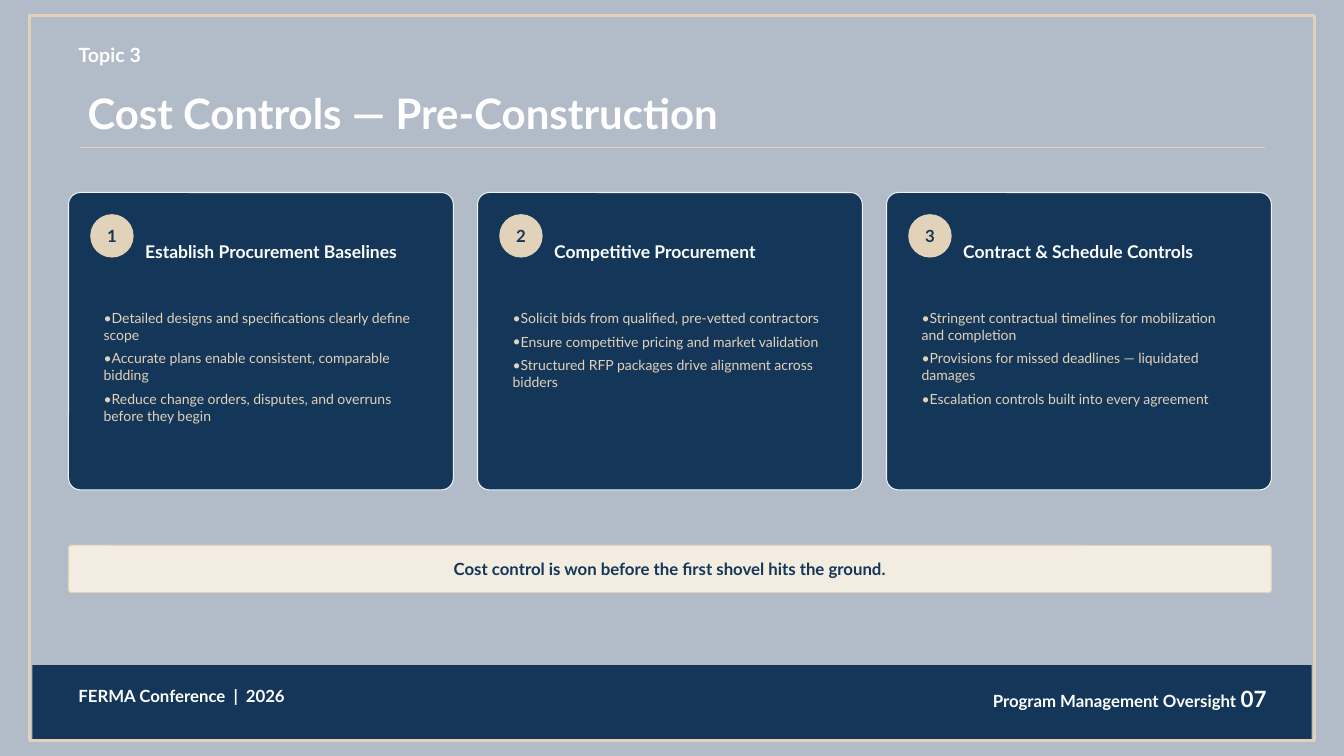
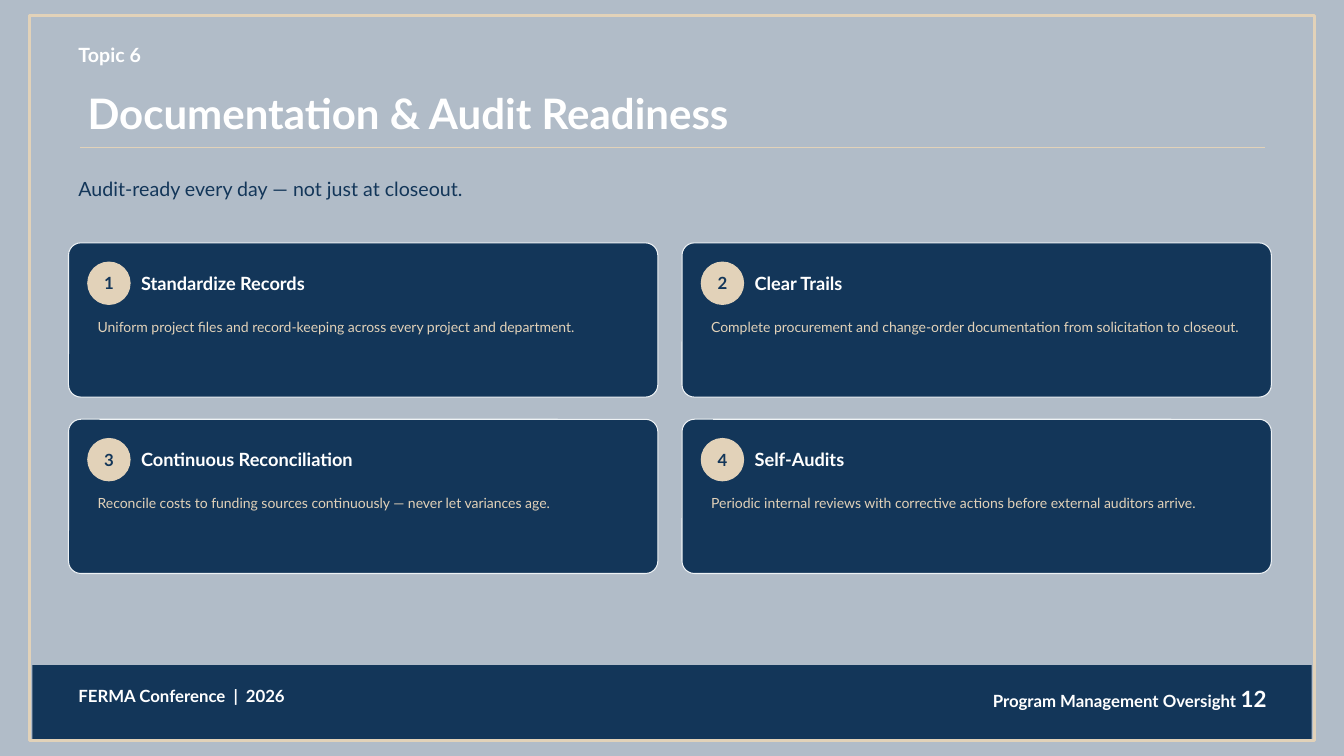
import pptx
import pptx.dml.color
import pptx.enum.shapes
import pptx.enum.text
import pptx.oxml
import pptx.oxml.ns
import pptx.util

RGB = pptx.dml.color.RGBColor
NAVY = RGB(0x13, 0x36, 0x59)
SAND = RGB(0xE2, 0xD2, 0xB9)
CREAM = RGB(0xF3, 0xEC, 0xE1)
MIST = RGB(0xB1, 0xBC, 0xC8)
PALE = RGB(0xEE, 0xF2, 0xF5)
WHITE = RGB(0xFF, 0xFF, 0xFF)

SHAPE = pptx.enum.shapes.MSO_SHAPE
ALIGN = pptx.enum.text.PP_ALIGN
MIDDLE = pptx.enum.text.MSO_ANCHOR.MIDDLE
NS = pptx.oxml.ns.nsdecls("a")
FONT = "Lato"

PAGE = (0, 0, 1333, 750)
LEFT, WIDE = 68, 1193


def px(value):
    """Turn px, at 100 to the inch, into EMU."""
    return pptx.util.Emu(round(value * 9144))


def inner(box, left, top, width, height):
    """Shift a box given relative to another one."""
    return box[0] + left, box[1] + top, width, height


def grid(box, cols, rows, gap_x, gap_y):
    """Yield equal cells, row by row."""
    left, top, width, height = box
    w = (width - gap_x * (cols - 1)) / cols
    h = (height - gap_y * (rows - 1)) / rows
    for row in range(rows):
        for col in range(cols):
            yield left + col * (w + gap_x), top + row * (h + gap_y), w, h


def style(item, values):
    for name, value in values.items():
        setattr(item, name, value)


def add_xml(parent, xml):
    parent.append(pptx.oxml.parse_xml(xml))


def add_run(para, words, size, color, bold=False):
    run = para.add_run()
    run.text = words
    style(run.font, {"name": FONT, "size": pptx.util.Pt(size), "bold": bold})
    run.font.color.rgb = color


def set_tabs(para, stops):
    tabs = "".join(f'<a:tab pos="{px(stop)}" algn="l"/>' for stop in stops)
    add_xml(para._p.get_or_add_pPr(), f"<a:tabLst {NS}>{tabs}</a:tabLst>")


def set_bullet(para, indent):
    props = para._p.get_or_add_pPr()
    style(props, {"marL": px(indent), "indent": -px(indent)})
    add_xml(props, f'<a:buFont {NS} typeface="{FONT}"/>')
    add_xml(props, f'<a:buChar {NS} char="•"/>')


def add_text(slide, box, words, size, color, bold=False, **frame):
    """Add a wrapped text box and return its first paragraph."""
    body = slide.shapes.add_textbox(*map(px, box)).text_frame
    style(body, {"word_wrap": True, **frame})
    para = body.paragraphs[0]
    add_run(para, words, size, color, bold)
    return para


def add_shape(slide, kind, box, fill=None, line=None, weight=0.75, round_by=None):
    shape = slide.shapes.add_shape(kind, *map(px, box))
    shape.shadow.inherit = False
    if fill is None:
        shape.fill.background()
    else:
        shape.fill.solid()
        shape.fill.fore_color.rgb = fill
    if line is None:
        shape.line.fill.background()
    else:
        shape.line.color.rgb = line
        shape.line.width = pptx.util.Pt(weight)
    if round_by is not None:
        shape.adjustments[0] = round_by
    return shape


def label(shape, words, size, color, **frame):
    """Write centred bold text in a shape."""
    body = shape.text_frame
    style(body, {"word_wrap": True, "vertical_anchor": MIDDLE, **frame})
    para = body.paragraphs[0]
    para.alignment = ALIGN.CENTER
    add_run(para, words, size, color, bold=True)


def add_head(slide, box, topic, title):
    add_text(slide, inner(box, 0, 0, 1039, 33), topic, 14, WHITE, True)
    add_text(slide, inner(box, 9, 44, 1088, 61), title, 30, WHITE, True)
    x, y, width, _ = inner(box, 11, 108, 1176, 0)
    line = slide.shapes.add_connector(
        pptx.enum.shapes.MSO_CONNECTOR.STRAIGHT, px(x), px(y), px(x + width), px(y))
    line.line.color.rgb = SAND
    line.line.width = pptx.util.Pt(0.75)
    add_xml(line._element.spPr, f"<a:effectLst {NS}/>")


def add_foot(slide, box, number):
    add_shape(slide, SHAPE.RECTANGLE, box, NAVY)
    event = add_text(slide, inner(box, 36, 15, 390, 40),
                     "FERMA Conference\t|\t2026", 12, WHITE, True)
    set_tabs(event, (154, 166))
    page = add_text(slide, inner(box, 814, 15, 420, 40),
                    "Program Management Oversight ", 12, WHITE, True)
    page.alignment = ALIGN.RIGHT
    add_run(page, number, 16, WHITE, True)


def add_card(slide, box, number, title, look):
    """Add a card with a numbered badge and a heading."""
    add_shape(slide, SHAPE.ROUNDED_RECTANGLE, box, NAVY, PALE, round_by=look["round"])
    badge = add_shape(slide, SHAPE.OVAL, inner(box, *look["badge"]), SAND, SAND)
    label(badge, str(number), 12, NAVY, margin_left=0, margin_right=0,
          margin_top=0, margin_bottom=0)
    add_text(slide, inner(box, *look["title"]), title, look["size"], WHITE, True,
             vertical_anchor=MIDDLE, margin_left=0)


def add_list(slide, box, items):
    first = add_text(slide, box, items[0], 10, SAND)
    set_bullet(first, 14)
    body = slide.shapes[-1].text_frame
    for item in items[1:]:
        para = body.add_paragraph()
        set_bullet(para, 14)
        para.space_before = pptx.util.Pt(5)
        add_run(para, item, 10, SAND)


def add_base(deck, topic, title, number):
    slide = deck.slides.add_slide(deck.slide_layouts[6])
    slide.background.fill.solid()
    slide.background.fill.fore_color.rgb = MIST
    add_foot(slide, inner(PAGE, 32, 660, 1269, 73), number)
    add_shape(slide, SHAPE.RECTANGLE, inner(PAGE, 29, 15, 1275, 720), None, SAND, 2.25)
    add_head(slide, inner(PAGE, LEFT, 38, WIDE, 109), topic, title)
    return slide


TALL = {"round": 0.04, "badge": (22, 22, 42, 42), "title": (76, 20, 283, 77), "size": 12.5}
FLAT = {"round": 0.08, "badge": (19, 19, 42, 42), "title": (72, 16, 493, 48), "size": 13}

COSTS = [
    ("Establish Procurement Baselines", [
        "Detailed designs and specifications clearly define scope",
        "Accurate plans enable consistent, comparable bidding",
        "Reduce change orders, disputes, and overruns before they begin"]),
    ("Competitive Procurement", [
        "Solicit bids from qualified, pre-vetted contractors",
        "Ensure competitive pricing and market validation",
        "Structured RFP packages drive alignment across bidders"]),
    ("Contract & Schedule Controls", [
        "Stringent contractual timelines for mobilization and completion",
        "Provisions for missed deadlines — liquidated damages",
        "Escalation controls built into every agreement"]),
]

AUDITS = [
    ("Standardize Records",
     "Uniform project files and record-keeping across every project and department."),
    ("Clear Trails",
     "Complete procurement and change-order documentation from solicitation to closeout."),
    ("Continuous Reconciliation",
     "Reconcile costs to funding sources continuously — never let variances age."),
    ("Self-Audits",
     "Periodic internal reviews with corrective actions before external auditors arrive."),
]


def cost_slide(deck):
    slide = add_base(deck, "Topic 3", "Cost Controls — Pre-Construction", "07")
    cells = grid((LEFT, 191, WIDE, 295), 3, 1, 24, 0)
    for number, (cell, (title, items)) in enumerate(zip(cells, COSTS), 1):
        add_card(slide, cell, number, title, TALL)
        add_list(slide, inner(cell, 25, 111, 333, 180), items)
    banner = add_shape(slide, SHAPE.ROUNDED_RECTANGLE, (LEFT, 541, WIDE, 47),
                       CREAM, SAND, round_by=0.06)
    label(banner, "Cost control is won before the first shovel hits the ground.", 12, NAVY)


def audit_slide(deck):
    slide = add_base(deck, "Topic 6", "Documentation & Audit Readiness", "12")
    add_text(slide, (LEFT, 171, WIDE, 46),
             "Audit-ready every day — not just at closeout.", 14, NAVY)
    cells = grid((LEFT, 241, WIDE, 328), 2, 2, 24, 22)
    for number, (cell, (title, words)) in enumerate(zip(cells, AUDITS), 1):
        add_card(slide, cell, number, title, FLAT)
        add_text(slide, inner(cell, 19, 70, 546, 68), words, 10, SAND)


def main():
    deck = pptx.Presentation()
    deck.slide_width, deck.slide_height = px(PAGE[2]), px(PAGE[3])
    cost_slide(deck)
    audit_slide(deck)
    deck.save("out.pptx")


if __name__ == "__main__":
    main()
